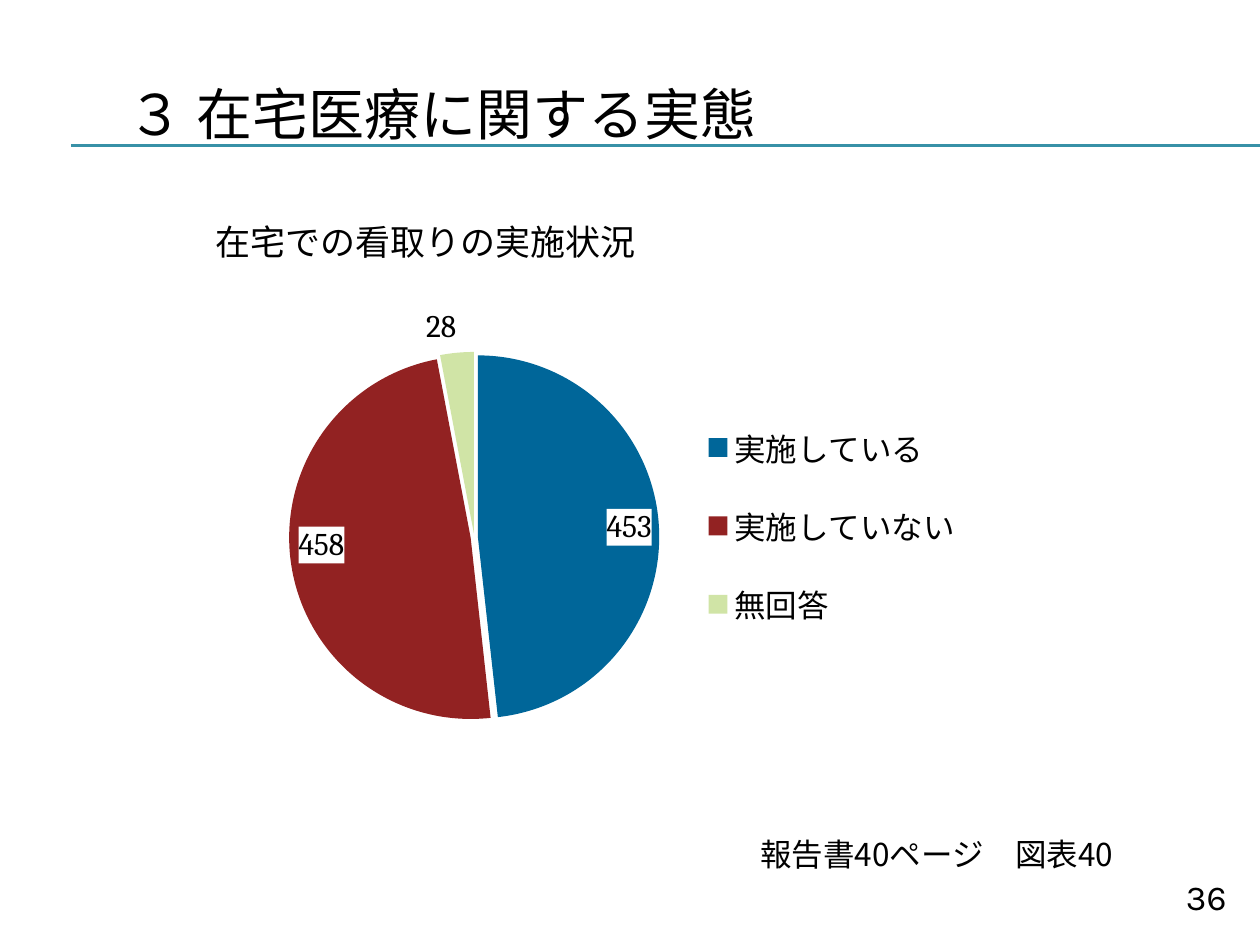
from lxml import etree
from pptx import Presentation
from pptx.chart.data import CategoryChartData
from pptx.dml.color import RGBColor
from pptx.enum.chart import XL_CHART_TYPE, XL_LABEL_POSITION, XL_LEGEND_POSITION
from pptx.enum.shapes import MSO_CONNECTOR
from pptx.enum.text import MSO_ANCHOR, PP_ALIGN
from pptx.oxml import parse_xml
from pptx.oxml.ns import nsdecls, qn
from pptx.util import Emu, Pt

PIE = XL_CHART_TYPE.PIE
INSIDE, OUTSIDE = XL_LABEL_POSITION.INSIDE_END, XL_LABEL_POSITION.OUTSIDE_END
LEGEND_RIGHT = XL_LEGEND_POSITION.RIGHT
STRAIGHT = MSO_CONNECTOR.STRAIGHT
TOP, MIDDLE = MSO_ANCHOR.TOP, MSO_ANCHOR.MIDDLE
LEFT, RIGHT = PP_ALIGN.LEFT, PP_ALIGN.RIGHT

PX = 914400 / 126
JP, LATIN, SERIF = "Noto Sans CJK JP", "Karla", "Cambria"
COLORS = {"text": "000000", "rule": "3891A7", "label": "FFFFFF",
          "yes": "006699", "no": "922222", "none": "D0E4A6"}


def write(sp, box, text, size, font, align=LEFT, anchor=TOP):
    sp.left, sp.top, sp.width, sp.height = [Emu(round(v * PX)) for v in box]
    tf = sp.text_frame
    tf.word_wrap = True
    tf.vertical_anchor = anchor
    p = tf.paragraphs[0]
    p.alignment = align
    r = p.add_run()
    r.text = text
    r.font.size = Pt(size)
    r.font.name = font
    r.font.color.rgb = RGBColor.from_string(COLORS["text"])
    etree.SubElement(r.font._element, qn("a:ea")).set("typeface", font)


def manual_layout(x, y, w, h, inner=False):
    target = '<c:layoutTarget val="inner"/>' if inner else ""
    return parse_xml(
        f'<c:layout {nsdecls("c")}><c:manualLayout>{target}'
        '<c:xMode val="edge"/><c:yMode val="edge"/>'
        f'<c:x val="{x}"/><c:y val="{y}"/><c:w val="{w}"/><c:h val="{h}"/>'
        '</c:manualLayout></c:layout>')


prs = Presentation()
prs.slide_width, prs.slide_height = Emu(round(1260 * PX)), Emu(round(945 * PX))
s = prs.slides.add_slide(prs.slide_layouts[5])

for y in (145, 146):
    line = s.shapes.add_connector(STRAIGHT, *[Emu(round(v * PX)) for v in (71, y, 1260, y)])
    line.line.color.rgb = RGBColor.from_string(COLORS["rule"])
    line.line.width = Pt(0.75)
    etree.SubElement(line._element.spPr, qn("a:effectLst"))

write(s.shapes.title, (115, 55, 1197, 116), "３ 在宅医療に関する実態", 32, JP, anchor=MIDDLE)

for box, text, size, font, align in (
    ((203, 214, 665, 55), "在宅での看取りの実施状況", 20, JP, LEFT),
    ((748, 829, 417, 49), "報告書40ページ　図表40", 18, JP, LEFT),
    ((1134, 869, 105, 57), "36", 20, LATIN, RIGHT),
):
    write(s.shapes.add_textbox(0, 0, 0, 0), box, text, size, font, align)

data = CategoryChartData()
data.categories = ["実施している", "実施していない", "無回答"]
data.add_series("Series 1", (453, 458, 28))
frame = [Emu(round(v * PX)) for v in (174, 294, 883, 446)]
chart = s.shapes.add_chart(PIE, *frame, data).chart
chart.has_title = False
chart.font.size = Pt(10)
chart.font.name = LATIN
chart.font.color.rgb = RGBColor.from_string(COLORS["text"])

chart.has_legend = True
legend = chart.legend
legend.position = LEGEND_RIGHT
legend.include_in_layout = False
legend.font.size = Pt(18)
legend.font.name = JP
legend.font.color.rgb = RGBColor.from_string(COLORS["text"])

plot_area = chart._chartSpace.chart.plotArea
for parent in (plot_area, legend._element):
    for old in parent.findall(qn("c:layout")):
        parent.remove(old)
plot_area.insert(0, manual_layout(0.13, 0.13, 0.42, 0.83, inner=True))
legend._element.find(qn("c:legendPos")).addnext(manual_layout(0.58, 0.22, 0.33, 0.6))

plot = chart.plots[0]
plot.vary_by_categories = True
series = plot.series[0]
series._element.find(qn("c:tx")).addnext(
    parse_xml(f'<c:explosion {nsdecls("c")} val="2"/>'))

for i, (key, position) in enumerate((("yes", INSIDE), ("no", INSIDE), ("none", OUTSIDE))):
    point = series.points[i]
    point.format.fill.solid()
    point.format.fill.fore_color.rgb = RGBColor.from_string(COLORS[key])
    point.format.line.fill.background()
    label = point.data_label
    label.font.size = Pt(18)
    label.font.name = SERIF
    label.font.color.rgb = RGBColor.from_string(COLORS["text"])
    label.position = position
    text_props = series._element.findall(".//" + qn("c:dLbl"))[i].find(qn("c:txPr"))
    text_props.addprevious(parse_xml(
        f'<c:spPr {nsdecls("c", "a")}><a:solidFill><a:srgbClr val="{COLORS["label"]}"/>'
        '</a:solidFill></c:spPr>'))

prs.save("out.pptx")
